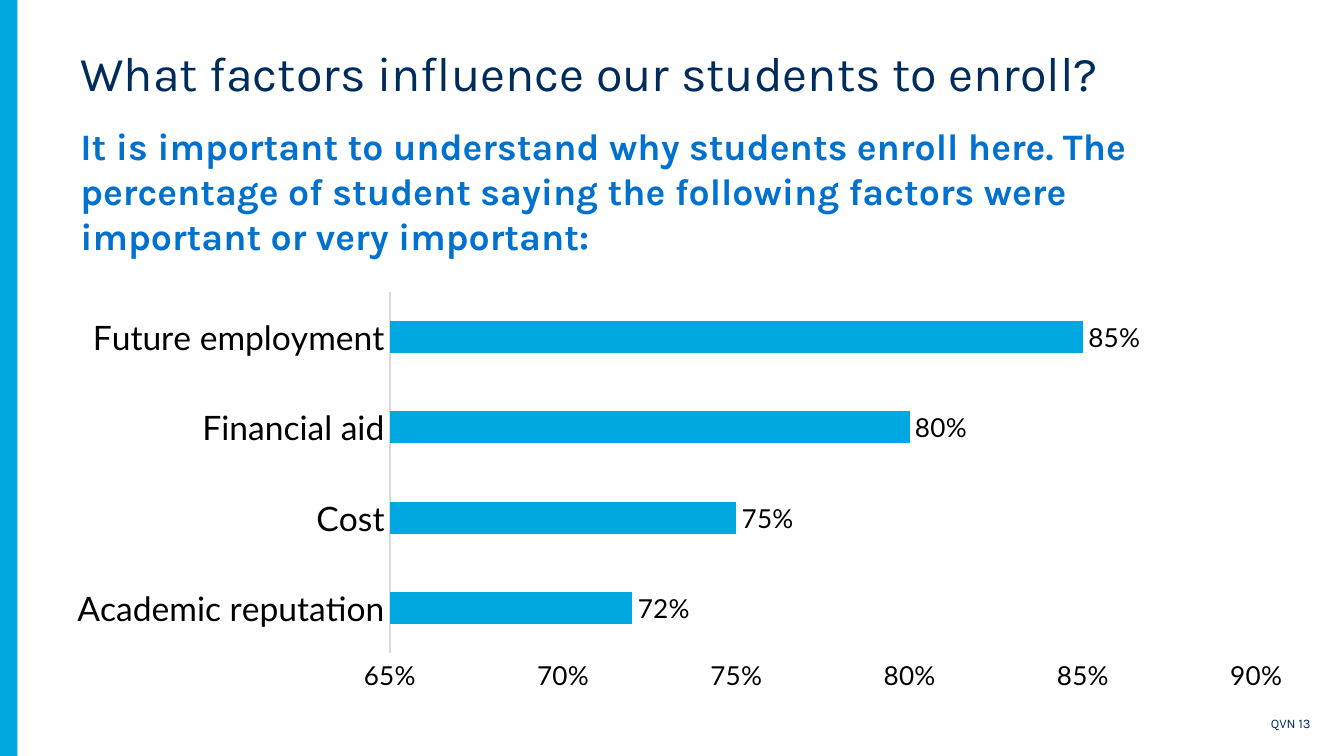
"""Build the slide on the factors that influence enrollment."""
from pptx import Presentation
from pptx.chart.data import CategoryChartData
from pptx.dml.color import RGBColor
from pptx.enum.chart import XL_CHART_TYPE, XL_LABEL_POSITION, XL_TICK_MARK
from pptx.enum.shapes import MSO_SHAPE
from pptx.enum.text import PP_ALIGN
from pptx.util import Pt

BAR_CLUSTERED = XL_CHART_TYPE.BAR_CLUSTERED
OUTSIDE_END = XL_LABEL_POSITION.OUTSIDE_END
NO_TICK = XL_TICK_MARK.NONE
RECTANGLE = MSO_SHAPE.RECTANGLE
LEFT, RIGHT = PP_ALIGN.LEFT, PP_ALIGN.RIGHT

TITLE = "What factors influence our students to enroll?"
LEAD = (
    "It is important to understand why students enroll here. The percentage of "
    "student saying the following factors were important or very important:"
)
FOOTER = "QVN 13"
FACTORS = [
    ("Academic reputation", 0.72),
    ("Cost", 0.75),
    ("Financial aid", 0.80),
    ("Future employment", 0.85),
]
PERCENT = "0%"
AXIS_MIN, AXIS_MAX, AXIS_STEP = 0.65, 0.90, 0.05

THEME = {
    "navy": RGBColor.from_string("002C5C"),
    "blue": RGBColor.from_string("0071CE"),
    "cyan": RGBColor.from_string("00A8E2"),
    "black": RGBColor.from_string("000000"),
    "rule": RGBColor.from_string("D9D9D9"),
    "text_font": "Karla",
    "chart_font": "Lato",
    "title": 26,
    "lead": 20,
    "category": 18,
    "value": 14,
    "base": 10,
    "footer": 7,
}
SLIDE_WIDTH, SLIDE_HEIGHT = 720, 405
MARGIN, TEXT_WIDTH = 36, 623.5


def style(font, size, color, face):
    font.size = Pt(THEME[size])
    font.color.rgb = THEME[color]
    font.name = THEME[face]


def add_text(slide, box, wording, size, color, align=LEFT, bold=False, spacing=1.0):
    frame = slide.shapes.add_textbox(*map(Pt, box)).text_frame
    frame.word_wrap = True
    paragraph = frame.paragraphs[0]
    paragraph.alignment = align
    paragraph.line_spacing = spacing
    run = paragraph.add_run()
    run.text = wording
    run.font.bold = bold
    style(run.font, size, color, "text_font")


def add_accent(slide):
    accent = slide.shapes.add_shape(RECTANGLE, 0, 0, Pt(9.4), Pt(SLIDE_HEIGHT))
    accent.shadow.inherit = False
    accent.fill.solid()
    accent.fill.fore_color.rgb = THEME["cyan"]
    accent.line.fill.background()


def add_factor_chart(slide, box):
    factor_data = CategoryChartData(number_format=PERCENT)
    factor_data.categories = [factor for factor, _ in FACTORS]
    factor_data.add_series("Series 1", [share for _, share in FACTORS])
    chart = slide.shapes.add_chart(BAR_CLUSTERED, *map(Pt, box), factor_data).chart
    chart.has_legend = False
    chart.has_title = False
    style(chart.font, "base", "black", "text_font")

    for axis, size in ((chart.category_axis, "category"), (chart.value_axis, "value")):
        axis.major_tick_mark = axis.minor_tick_mark = NO_TICK
        axis.has_major_gridlines = False
        style(axis.tick_labels.font, size, "black", "chart_font")
    factor_line = chart.category_axis.format.line
    factor_line.color.rgb = THEME["rule"]
    factor_line.width = Pt(0.75)

    shares = chart.value_axis
    shares.minimum_scale, shares.maximum_scale = AXIS_MIN, AXIS_MAX
    shares.major_unit = AXIS_STEP
    shares.format.line.fill.background()
    shares.tick_labels.number_format = PERCENT
    shares.tick_labels.number_format_is_linked = False

    plot = chart.plots[0]
    plot.gap_width = 182
    plot.vary_by_categories = False
    bars = plot.series[0]
    bars.invert_if_negative = False
    bars.format.fill.solid()
    bars.format.fill.fore_color.rgb = THEME["cyan"]
    labels = bars.data_labels
    labels.show_value = True
    labels.position = OUTSIDE_END
    labels.number_format = PERCENT
    labels.number_format_is_linked = False
    style(labels.font, "value", "black", "chart_font")


def main():
    deck = Presentation()
    deck.slide_width, deck.slide_height = Pt(SLIDE_WIDTH), Pt(SLIDE_HEIGHT)
    slide = deck.slides.add_slide(deck.slide_layouts[6])
    add_accent(slide)
    add_text(slide, (660, 380, 49.2, 16), FOOTER, "footer", "navy", align=RIGHT)
    add_text(slide, (MARGIN, 62.6, TEXT_WIDTH, 33), LEAD, "lead", "blue", bold=True)
    add_text(slide, (MARGIN, 23, TEXT_WIDTH, 61), TITLE, "title", "navy", spacing=0.9)
    add_factor_chart(slide, (28, 152, 672.5, 222.5))
    deck.save("out.pptx")


if __name__ == "__main__":
    main()
